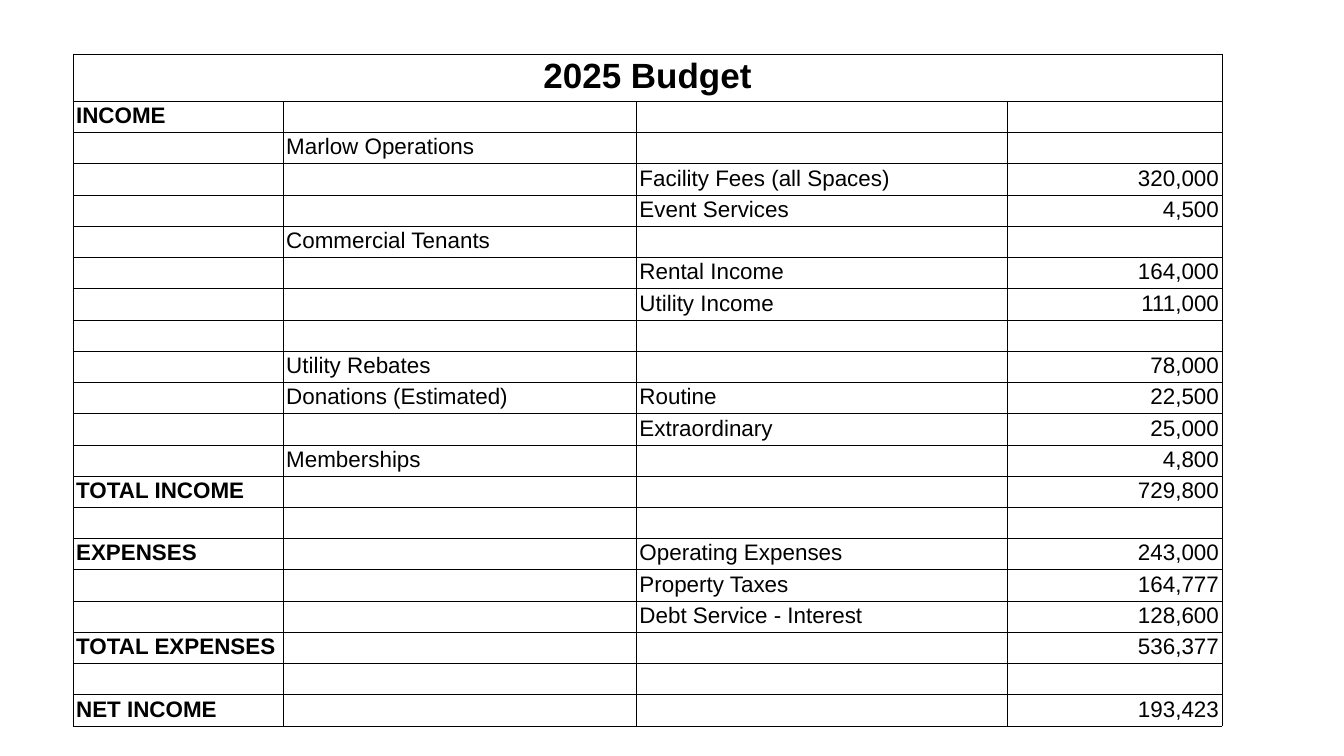
from dataclasses import dataclass

from lxml.etree import SubElement
from pptx import Presentation
from pptx.dml.color import RGBColor
from pptx.enum.text import MSO_ANCHOR, PP_ALIGN
from pptx.oxml.ns import qn
from pptx.util import Emu, Pt


@dataclass(frozen=True)
class Theme:
    font: str = "Arial"
    ink: str = "000000"
    title_size: int = 50
    body_size: int = 32
    border_width: int = 1
    line_spacing: float = 0.9


THEME = Theme()
SLIDE_SIZE = (2667, 1500)
TABLE_BOX = (145, 107, 2280, 1334)
COLUMN_WIDTHS = (417, 701, 735, 427)
TITLE_HEIGHT = 94
CELL_INSET = 6

TITLE = "2025 Budget"
BUDGET_ROWS = [
    ("INCOME", "", "", ""),
    ("", "Marlow Operations", "", ""),
    ("", "", "Facility Fees (all Spaces)", "320,000"),
    ("", "", "Event Services", "4,500"),
    ("", "Commercial Tenants", "", ""),
    ("", "", "Rental Income", "164,000"),
    ("", "", "Utility Income", "111,000"),
    ("", "", "", ""),
    ("", "Utility Rebates", "", "78,000"),
    ("", "Donations (Estimated)", "Routine", "22,500"),
    ("", "", "Extraordinary", "25,000"),
    ("", "Memberships", "", "4,800"),
    ("TOTAL INCOME", "", "", "729,800"),
    ("", "", "", ""),
    ("EXPENSES", "", "Operating Expenses", "243,000"),
    ("", "", "Property Taxes", "164,777"),
    ("", "", "Debt Service - Interest", "128,600"),
    ("TOTAL EXPENSES", "", "", "536,377"),
    ("", "", "", ""),
    ("NET INCOME", "", "", "193,423"),
]


def px(length):
    return Emu(length * 9144)


def style_cell(cell):
    properties = cell._tc.get_or_add_tcPr()
    for side in ("lnL", "lnR", "lnT", "lnB"):
        line = SubElement(properties, qn(f"a:{side}"), w=str(Pt(THEME.border_width)))
        fill = SubElement(line, qn("a:solidFill"))
        SubElement(fill, qn("a:srgbClr"), val=THEME.ink)
    cell.fill.background()
    cell.vertical_anchor = MSO_ANCHOR.MIDDLE
    cell.margin_left = cell.margin_right = px(CELL_INSET)
    cell.margin_top = cell.margin_bottom = px(CELL_INSET)


def write_cell(cell, text, size, bold, alignment):
    cell.text_frame.text = text
    paragraph = cell.text_frame.paragraphs[0]
    paragraph.alignment = alignment
    paragraph.line_spacing = THEME.line_spacing
    for run in paragraph.runs:
        run.font.name = THEME.font
        run.font.size = Pt(size)
        run.font.bold = bold
        run.font.color.rgb = RGBColor.from_string(THEME.ink)


def add_budget_table(slide, box):
    row_count = len(BUDGET_ROWS) + 1
    amount_column = len(COLUMN_WIDTHS) - 1
    frame = slide.shapes.add_table(row_count, len(COLUMN_WIDTHS), *map(px, box))
    table = frame.table
    table.first_row = table.horz_banding = False
    for column, width in zip(table.columns, COLUMN_WIDTHS):
        column.width = px(width)
    row_height = (box[3] - TITLE_HEIGHT) // len(BUDGET_ROWS)
    for index, row in enumerate(table.rows):
        row.height = px(row_height if index else TITLE_HEIGHT)
    for cell in table.iter_cells():
        style_cell(cell)

    title_cell = table.cell(0, 0)
    title_cell.merge(table.cell(0, amount_column))
    write_cell(title_cell, TITLE, THEME.title_size, True, PP_ALIGN.CENTER)
    for row_index, values in enumerate(BUDGET_ROWS, start=1):
        for column_index, text in enumerate(values):
            if text:
                alignment = PP_ALIGN.RIGHT if column_index == amount_column else PP_ALIGN.LEFT
                write_cell(table.cell(row_index, column_index), text,
                           THEME.body_size, column_index == 0, alignment)


def main():
    presentation = Presentation()
    presentation.slide_width, presentation.slide_height = map(px, SLIDE_SIZE)
    slide = presentation.slides.add_slide(presentation.slide_layouts[6])
    add_budget_table(slide, TABLE_BOX)
    presentation.save("out.pptx")


if __name__ == "__main__":
    main()
